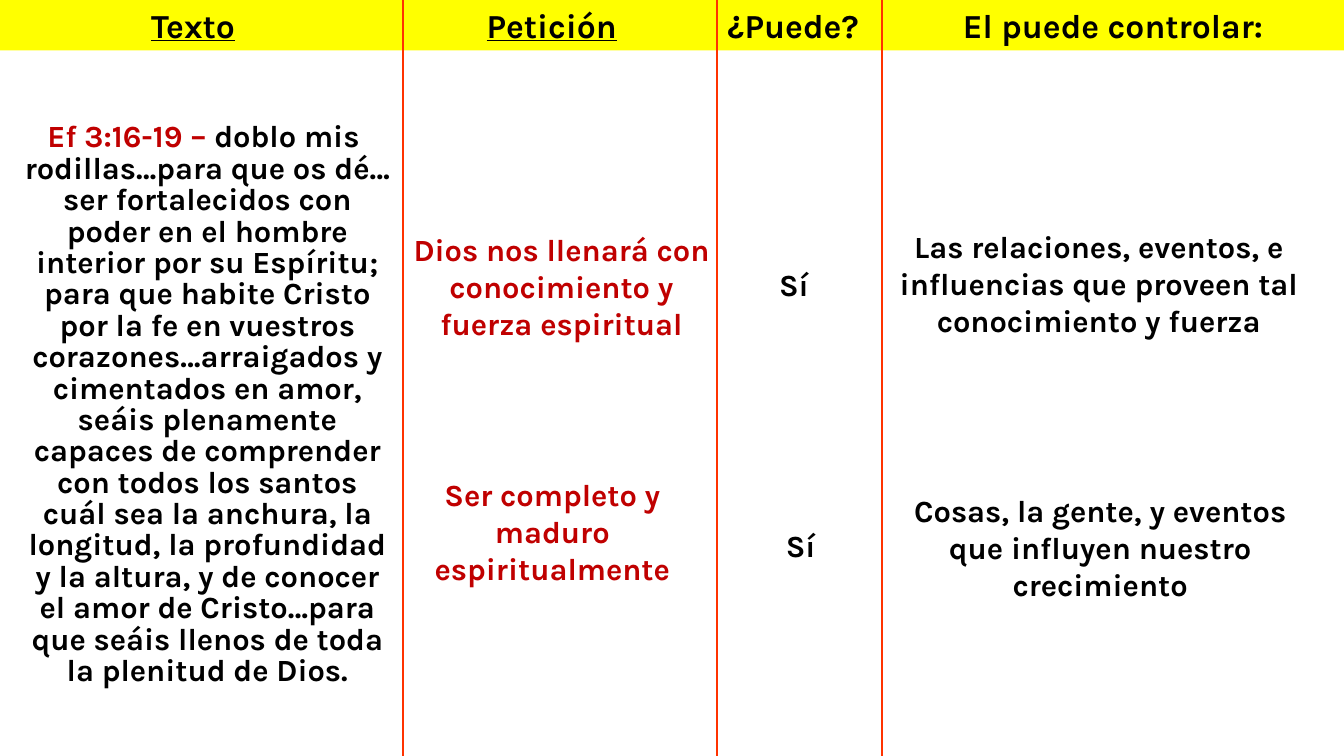
from dataclasses import dataclass

from lxml.etree import SubElement
from pptx import Presentation
from pptx.dml.color import RGBColor
from pptx.enum.shapes import MSO_CONNECTOR, MSO_SHAPE
from pptx.enum.text import PP_ALIGN
from pptx.oxml.ns import qn
from pptx.util import Cm, Pt


@dataclass(frozen=True)
class Theme:
    font: str = "Karla"
    black: RGBColor = RGBColor(0x00, 0x00, 0x00)
    red: RGBColor = RGBColor(0xC0, 0x00, 0x00)
    yellow: RGBColor = RGBColor(0xFF, 0xFF, 0x00)
    divider: RGBColor = RGBColor(0xFF, 0x33, 0x00)
    header_size: Pt = Pt(24)
    body_size: Pt = Pt(22)
    divider_width: Pt = Pt(1.5)


theme = Theme()


def format_paragraph(paragraph, size, color, align=PP_ALIGN.CENTER):
    paragraph.alignment = align
    paragraph.font.name = theme.font
    paragraph.font.size = size
    paragraph.font.bold = True
    paragraph.font.color.rgb = color


def add_text(slide, left, top, width, height, lines, color):
    """Add a wrapped text box with one centred paragraph per line."""
    box = slide.shapes.add_textbox(Cm(left), Cm(top), Cm(width), Cm(height))
    frame = box.text_frame
    frame.word_wrap = True
    frame.text = "\n".join(lines)
    for paragraph in frame.paragraphs:
        format_paragraph(paragraph, theme.body_size, color)
    return frame


presentation = Presentation()
presentation.slide_width = Cm(33.87)
presentation.slide_height = Cm(19.05)
slide = presentation.slides.add_slide(presentation.slide_layouts[6])

# Bible passage
passage = add_text(slide, 0.36, 2.97, 9.73, 15.44, [
    "Ef 3:16-19 – ",
    "rodillas…para que os dé…ser fortalecidos con poder en el hombre interior "
    "por su Espíritu; para que habite Cristo por la fe en vuestros "
    "corazones…arraigados y cimentados en amor, seáis plenamente capaces de "
    "comprender con todos los santos cuál sea la anchura, la longitud, la "
    "profundidad y la altura, y de conocer el amor de Cristo…para que seáis "
    "llenos de toda la plenitud de Dios.",
], theme.black)
reference = passage.paragraphs[0]
reference.runs[0].font.color.rgb = theme.red
reference.add_run().text = "doblo mis "
for paragraph in passage.paragraphs:
    paragraph.line_spacing = 0.85

# Petitions, answers and what He can control
answers = [
    (10.16, 5.69, 7.98, 3.07, theme.red,
     ["Dios nos llenará con conocimiento y fuerza espiritual"]),
    (18.42, 6.58, 3.18, 1.19, theme.black, ["Sí"]),
    (22.23, 5.61, 10.92, 3.07, theme.black,
     ["Las relaciones, eventos, e influencias que proveen tal conocimiento y fuerza"]),
    (10.16, 11.86, 7.52, 3.07, theme.red,
     ["Ser completo y maduro", "espiritualmente"]),
    (18.59, 13.16, 3.18, 1.19, theme.black, ["Sí"]),
    (22.3, 12.27, 10.85, 3.07, theme.black,
     ["Cosas, la gente, y eventos que influyen nuestro crecimiento"]),
]
for left, top, width, height, color, lines in answers:
    add_text(slide, left, top, width, height, lines, color)

# Header band
headers = [
    ("Texto", 0, 9.73, PP_ALIGN.CENTER, True),
    ("Petición", 9.73, 18.08, PP_ALIGN.CENTER, True),
    ("¿Puede?", 18.08, 22.23, PP_ALIGN.LEFT, False),
    ("El puede controlar:", 22.23, 33.87, PP_ALIGN.CENTER, False),
]
for title, left, right, align, underline in headers:
    header = slide.shapes.add_shape(
        MSO_SHAPE.RECTANGLE, Cm(left), 0, Cm(right - left), Cm(1.27))
    header.shadow.inherit = False
    header.fill.solid()
    header.fill.fore_color.rgb = theme.yellow
    header.line.fill.background()
    header.text_frame.text = title
    paragraph = header.text_frame.paragraphs[0]
    format_paragraph(paragraph, theme.header_size, theme.black, align)
    paragraph.font.underline = underline

# Column dividers
for x in (10.16, 18.08, 22.23):
    divider = slide.shapes.add_connector(
        MSO_CONNECTOR.STRAIGHT, Cm(x), 0, Cm(x), presentation.slide_height)
    divider.line.color.rgb = theme.divider
    divider.line.width = theme.divider_width
    SubElement(divider._element.spPr, qn("a:effectLst"))

presentation.save("out.pptx")
